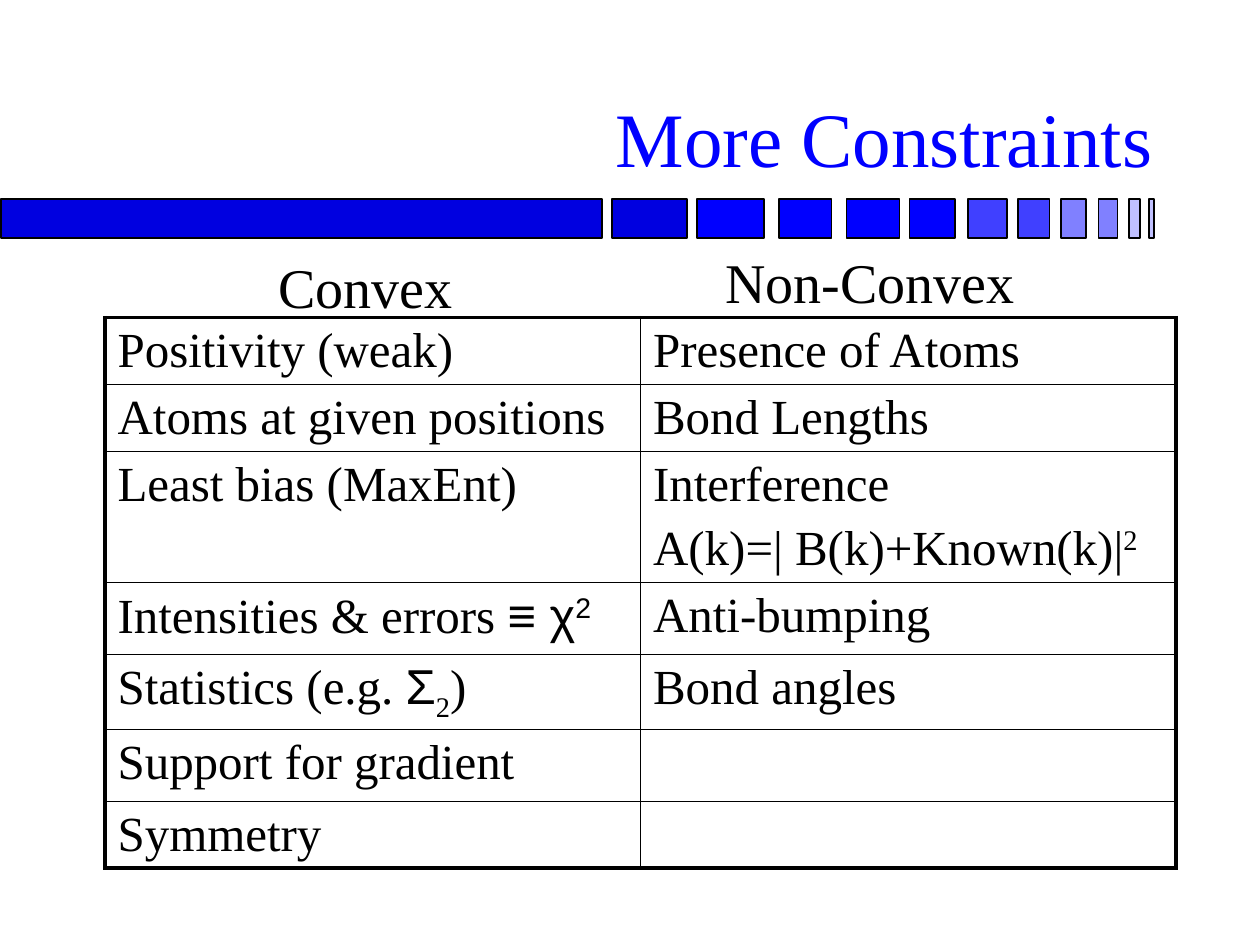
from dataclasses import dataclass
from typing import NamedTuple

from lxml.etree import SubElement
from pptx import Presentation
from pptx.dml.color import RGBColor
from pptx.enum.shapes import MSO_SHAPE as Shape
from pptx.enum.text import MSO_ANCHOR as Anchor, MSO_AUTO_SIZE as AutoSize, PP_ALIGN as Align
from pptx.oxml.ns import qn
from pptx.util import Pt


@dataclass(frozen=True)
class Theme:
    serif: str = "Times New Roman"
    sans: str = "Arial"
    ink: str = "000000"
    accent: str = "0000FF"
    title_size: float = 44
    heading_size: float = 32
    cell_size: float = 28
    thin: float = 1
    thick: float = 2.25


THEME = Theme()


class Bar(NamedTuple):
    left: float
    width: float
    color: str


class Heading(NamedTuple):
    text: str
    left: float
    top: float
    width: float


class Piece(NamedTuple):
    text: str
    font: str = THEME.serif
    baseline: int = 0  # percent raised (+) or lowered (-)


class Row(NamedTuple):
    height: float
    convex: list  # paragraphs, each a list of pieces
    non_convex: list


BARS = [
    Bar(0.72, 343.4, "0000E0"), Bar(349.9, 42.5, "0000E0"),
    Bar(398.2, 38.2, "0000FF"), Bar(445, 30.2, "0000FF"),
    Bar(483.8, 30.2, "0000FF"), Bar(519.8, 25.9, "0000FF"),
    Bar(553, 22.3, "4040FF"), Bar(581.8, 18, "4040FF"),
    Bar(606.2, 14.4, "8080FF"), Bar(627.8, 10.8, "8080FF"),
    Bar(645.1, 6.5, "C0C0FF"), Bar(656.6, 2.9, "C0C0FF"),
]
HEADINGS = [Heading("Convex", 152, 141, 126.7), Heading("Non-Convex", 407.5, 138, 188.6)]
ROWS = [
    Row(38, [[Piece("Positivity (weak)")]], [[Piece("Presence of Atoms")]]),
    Row(38, [[Piece("Atoms at given positions")]], [[Piece("Bond Lengths")]]),
    Row(75, [[Piece("Least bias (MaxEnt)")]],
        [[Piece("Interference")],
         [Piece("A(k)=| B(k)+Known(k)|"), Piece("2", baseline=30)]]),
    Row(41, [[Piece("Intensities & errors "), Piece("≡ χ", THEME.sans),
              Piece("2", THEME.sans, 30)]],
        [[Piece("Anti-bumping")]]),
    Row(43, [[Piece("Statistics (e.g. "), Piece("Σ", THEME.sans),
              Piece("2", baseline=-25), Piece(")")]],
        [[Piece("Bond angles")]]),
    Row(41, [[Piece("Support for gradient")]], []),
    Row(38, [[Piece("Symmetry")]], []),
]


def add_span(para, piece: Piece, size: float, color: str) -> None:
    span = para.add_run()
    span.text = piece.text
    for name, value in {"name": piece.font, "size": Pt(size)}.items():
        setattr(span.font, name, value)
    span.font.color.rgb = RGBColor.from_string(color)
    if piece.baseline:
        span.font._element.set("baseline", str(piece.baseline * 1000))


def add_title(page, text: str) -> None:
    title = page.shapes.title
    for name, value in {"left": 54, "top": 15, "width": 612, "height": 93}.items():
        setattr(title, name, Pt(value))
    title.text_frame.vertical_anchor = Anchor.BOTTOM
    para = title.text_frame.paragraphs[0]
    para.alignment = Align.RIGHT
    add_span(para, Piece(text), THEME.title_size, THEME.accent)


def add_bar(group, bar: Bar) -> None:
    box = group.shapes.add_shape(
        Shape.RECTANGLE, Pt(bar.left), Pt(113.8), Pt(bar.width), Pt(22.3))
    box.shadow.inherit = False
    box.fill.solid()
    box.fill.fore_color.rgb = RGBColor.from_string(bar.color)
    box.line.color.rgb = RGBColor.from_string(THEME.ink)
    box.line.width = Pt(THEME.thin)


def add_heading(page, heading: Heading) -> None:
    box = page.shapes.add_textbox(
        Pt(heading.left), Pt(heading.top), Pt(heading.width), Pt(45.5))
    frame = box.text_frame
    for name, value in {"word_wrap": True, "auto_size": AutoSize.SHAPE_TO_FIT_TEXT}.items():
        setattr(frame, name, value)
    add_span(frame.paragraphs[0], Piece(heading.text), THEME.heading_size, THEME.ink)


def set_borders(cell, widths: dict) -> None:
    properties = cell._tc.get_or_add_tcPr()
    for side, width in widths.items():
        line = SubElement(properties, qn(f"a:ln{side}"), w=str(int(Pt(width))))
        fill = SubElement(line, qn("a:solidFill"))
        SubElement(fill, qn("a:srgbClr"), val=THEME.ink)


def fill_cell(cell, paragraphs: list) -> None:
    frame = cell.text_frame
    for index, pieces in enumerate(paragraphs):
        para = frame.add_paragraph() if index else frame.paragraphs[0]
        if index:
            para.space_before = Pt(0.2 * THEME.cell_size)
        for piece in pieces:
            add_span(para, piece, THEME.cell_size, THEME.ink)


def add_constraints(page, rows: list) -> None:
    height = sum(row.height for row in rows)
    table = page.shapes.add_table(
        len(rows), 2, Pt(60), Pt(181.5), Pt(612), Pt(height)).table
    for name in ("first_row", "horz_banding"):
        setattr(table, name, False)
    last = len(rows) - 1
    for index, row in enumerate(rows):
        table.rows[index].height = Pt(row.height)
        for column, paragraphs in enumerate((row.convex, row.non_convex)):
            cell = table.cell(index, column)
            # Thick lines only on the outer frame
            outer = {"L": column == 0, "R": column == 1, "T": index == 0, "B": index == last}
            set_borders(cell, {side: THEME.thick if edge else THEME.thin
                               for side, edge in outer.items()})
            cell.fill.background()
            fill_cell(cell, paragraphs)


def main() -> None:
    deck = Presentation()
    deck.slide_width, deck.slide_height = Pt(720), Pt(540)
    page = deck.slides.add_slide(deck.slide_layouts[5])

    # Fading band under the title
    band = page.shapes.add_group_shape()
    for bar in BARS:
        add_bar(band, bar)

    # Title, table and column headings
    add_title(page, "More Constraints")
    add_constraints(page, ROWS)
    for heading in HEADINGS:
        add_heading(page, heading)

    deck.save("out.pptx")


if __name__ == "__main__":
    main()
